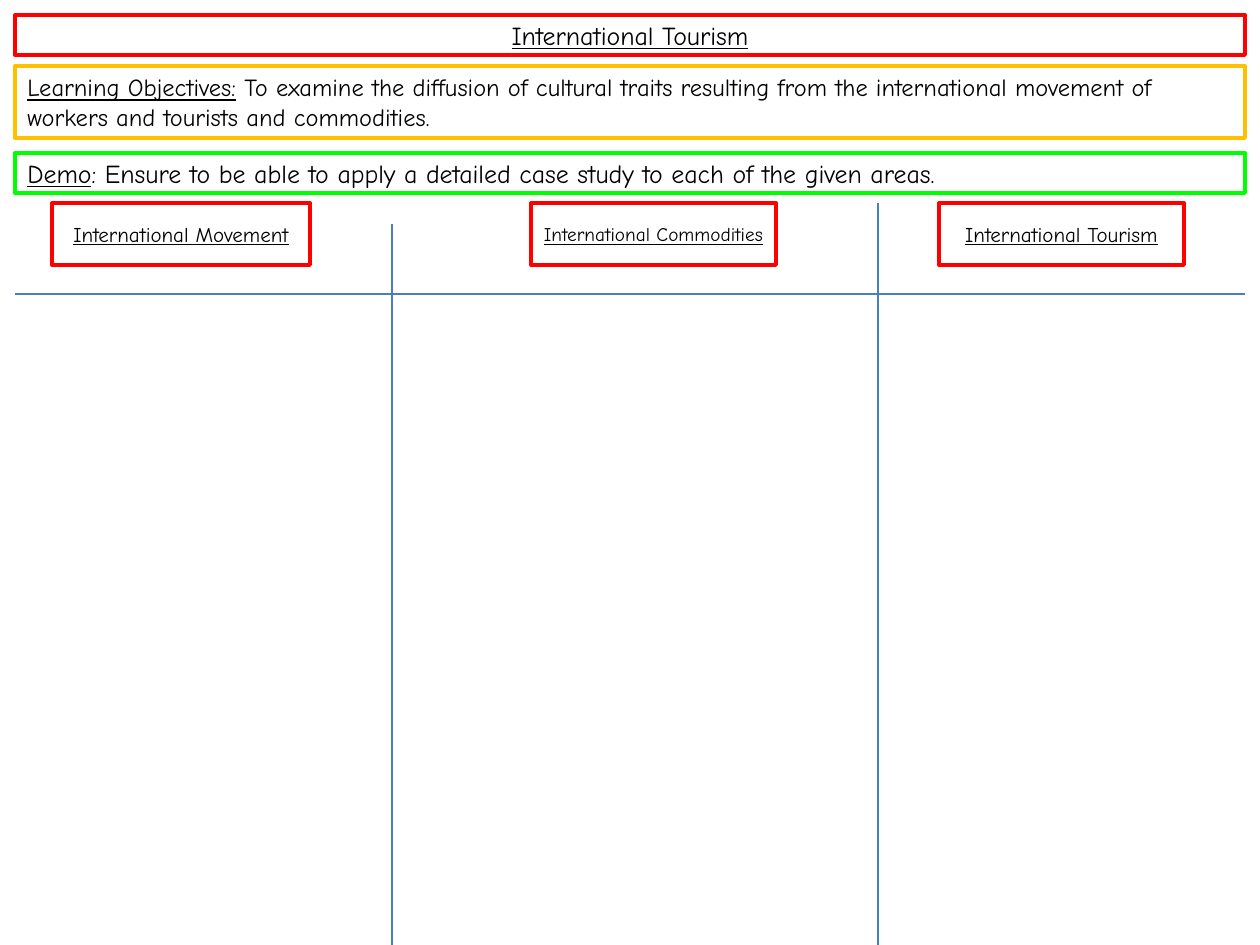
from dataclasses import dataclass

from lxml.etree import SubElement
from pptx import Presentation
from pptx.dml.color import RGBColor
from pptx.enum.shapes import MSO_CONNECTOR as Link, MSO_SHAPE as Form
from pptx.enum.text import MSO_ANCHOR as Anchor, MSO_AUTO_SIZE as Fit, PP_ALIGN as Align
from pptx.oxml.ns import qn
from pptx.slide import Slide
from pptx.util import Emu, Pt

RED = RGBColor(0xFF, 0x00, 0x00)
AMBER = RGBColor(0xFF, 0xC0, 0x00)
GREEN = RGBColor(0x00, 0xFF, 0x00)
BLUE = RGBColor(0x4B, 0x7E, 0xBC)
BLACK = RGBColor(0x00, 0x00, 0x00)
FACE = "Comic Neue"
WIDE, HIGH = 1260, 945
EDGE = 15
SPAN = WIDE - 2 * EDGE
HEAD_TOP, HEAD_HIGH = 203, 62


@dataclass(frozen=True)
class Box:
    left: int
    top: int
    width: int
    height: int
    color: RGBColor
    size: float
    label: str
    body: str = ""
    anchor: Anchor = Anchor.MIDDLE


@dataclass(frozen=True)
class Rule:
    x1: int
    y1: int
    x2: int
    y2: int


def px(n: int) -> Emu:
    return Emu(round(n * 914400 / 126))


def head(left: int, width: int, size: float, label: str) -> Box:
    return Box(left, HEAD_TOP, width, HEAD_HIGH, RED, size, label)


TITLE = Box(EDGE, 15, SPAN, 40, RED, 14.8, "International Tourism")
BOXES = [
    Box(EDGE, 66, SPAN, 72, AMBER, 14, "Learning Objectives:",
        " To examine the diffusion of cultural traits resulting from the "
        "international movement of workers and tourists and commodities.",
        Anchor.TOP),
    Box(EDGE, 153, SPAN, 40, GREEN, 14.8, "Demo",
        ": Ensure to be able to apply a detailed case study to each of the given areas."),
    head(52, 258, 12, "International Movement"),
    head(531, 245, 11, "International Commodities "),
    head(939, 245, 12, "International Tourism"),
]
RULES = [
    Rule(392, 224, 392, HIGH),
    Rule(878, HEAD_TOP, 878, HIGH),
    Rule(EDGE, 294, EDGE + SPAN, 294),
]


def dress(shape, box: Box) -> None:
    shape.left, shape.top = px(box.left), px(box.top)
    shape.width, shape.height = px(box.width), px(box.height)
    shape.fill.background()
    shape.line.color.rgb = box.color
    shape.line.width = Pt(2.25)
    frame = shape.text_frame
    frame.word_wrap = True
    frame.auto_size = Fit.NONE
    frame.vertical_anchor = box.anchor
    para = frame.paragraphs[0]
    para.alignment = Align.LEFT if box.body else Align.CENTER
    font = para.font
    font.name, font.size = FACE, Pt(box.size)
    font.color.rgb = BLACK
    for text, under in ((box.label, True), (box.body, False)):
        if text:
            run = para.add_run()
            run.text = text
            run.font.underline = under


def add_box(slide: Slide, box: Box) -> None:
    shape = slide.shapes.add_shape(Form.RECTANGLE, 0, 0, 0, 0)
    shape.shadow.inherit = False
    dress(shape, box)


def add_rule(slide: Slide, rule: Rule) -> None:
    line = slide.shapes.add_connector(
        Link.STRAIGHT, px(rule.x1), px(rule.y1), px(rule.x2), px(rule.y2))
    line.line.color.rgb = BLUE
    line.line.width = Pt(0.75)
    SubElement(line._element.spPr, qn("a:effectLst"))


def main() -> None:
    deck = Presentation()
    deck.slide_width, deck.slide_height = px(WIDE), px(HIGH)
    slide = deck.slides.add_slide(deck.slide_layouts[5])
    dress(slide.shapes.title, TITLE)
    for box in BOXES:
        add_box(slide, box)
    for rule in RULES:
        add_rule(slide, rule)
    deck.save("out.pptx")


if __name__ == "__main__":
    main()
